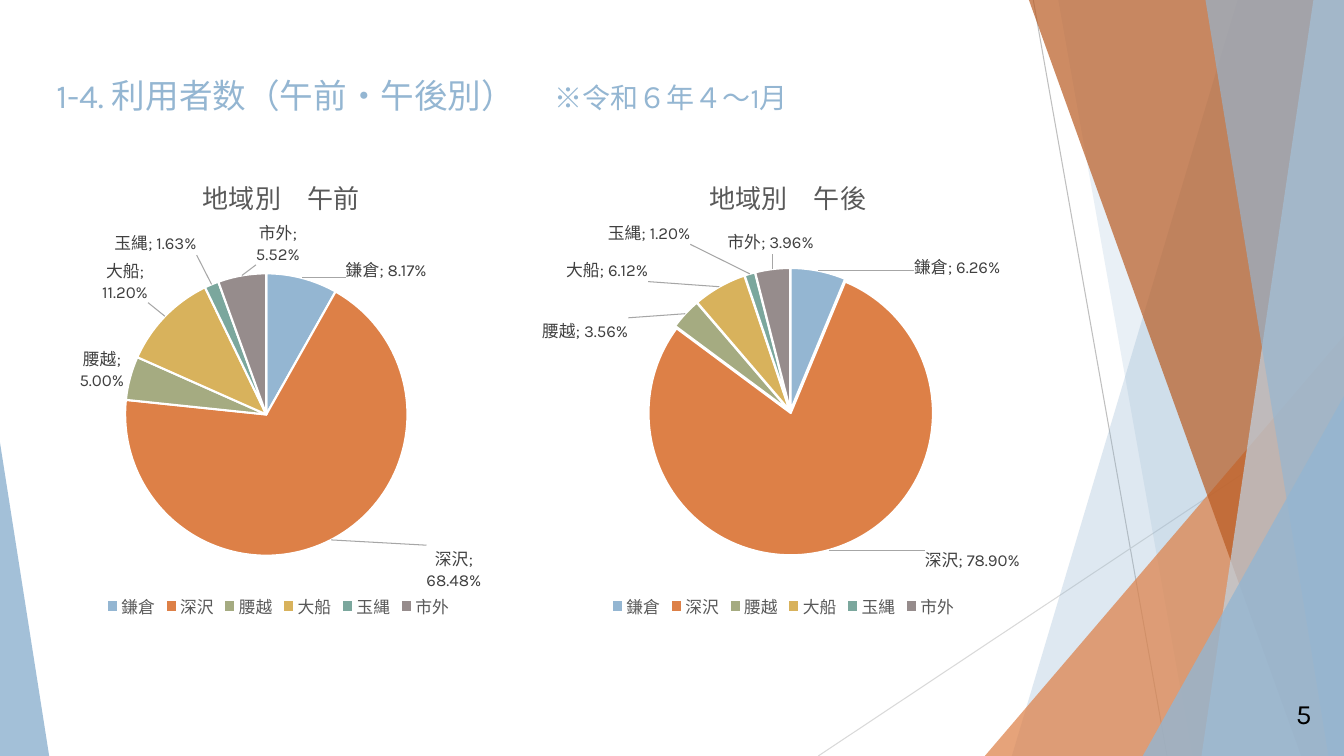
import copy
import pptx
import pptx.util
import pptx.dml.color
import pptx.oxml
import pptx.oxml.ns
import pptx.chart.data
import pptx.enum.chart
import pptx.enum.shapes

Cm, Pt = pptx.util.Cm, pptx.util.Pt
tag = pptx.oxml.ns.qn
W, H = 33.87, 19.05
BLUE, RUST = "94B6D2", "DD8047"
FONT = "Karla"


def tint(color, code):
    color.rgb = pptx.dml.color.RGBColor.from_string(code)


def place(mode="", **spots):
    """Return a manual chart layout; spots are fractions of the chart."""
    lay = pptx.oxml.parse_xml(
        f'<c:layout {pptx.oxml.ns.nsdecls("c")}><c:manualLayout/></c:layout>')
    parts = [("layoutTarget", mode)] if mode else []
    if mode or "edge" in spots:
        parts += [("xMode", "edge"), ("yMode", "edge")]
    spots.pop("edge", None)
    for name, val in parts + list(spots.items()):
        lay[0].makeelement(tag("c:" + name))
        node = lay[0].makeelement(tag("c:" + name), {"val": str(val)})
        lay[0].append(node)
    return lay


deck = pptx.Presentation()
deck.slide_width, deck.slide_height = Cm(W), Cm(H)
slide = deck.slides.add_slide(deck.slide_layouts[6])
shapes = slide.shapes

# Thin lines behind the facets
for x1, y1, x2, y2, code in [(26.04, 0, 29.41, H, "BFBFBF"),
                             (W, 10.24, 20.62, H, "D9D9D9")]:
    line = shapes.add_connector(pptx.enum.shapes.MSO_CONNECTOR.STRAIGHT,
                                Cm(x1), Cm(y1), Cm(x2), Cm(y2))
    tint(line.line.color, code)
    line.line.width = Pt(0.75)
    props = line._element.spPr
    props.append(props.makeelement(tag("a:effectLst")))

# Facets: a band is (top x, bottom x) reaching the right edge,
# a triangle is (left, top, width, height, apex)
facets = [
    ((31.19, 25.5), BLUE, 30),
    ((26.67, 30.05), BLUE, 20),
    ((24.82, 8.46, 9.05, 10.59, 1), RUST, 72),
    ((25.93, 32.79), "B95B22", 70),
    ((33.1, 30.28), "BFD3E4", 70),
    ((30.38, 33.48), BLUE, 65),
    ((28.8, 9.98, 5.07, 9.07, 1), BLUE, 80),
    ((0, 11.15, 1.24, 7.9, 0), BLUE, 85),
]
for geo, code, alpha in facets:
    if len(geo) == 2:
        top, base = geo
        pen = shapes.build_freeform(Cm(top), 0)
        pen.add_line_segments([(Cm(W), 0), (Cm(W), Cm(H)), (Cm(base), Cm(H))])
        facet = pen.convert_to_shape()
    else:
        facet = shapes.add_shape(
            pptx.enum.shapes.MSO_SHAPE.ISOSCELES_TRIANGLE,
            *[Cm(n) for n in geo[:4]])
        facet.adjustments[0] = geo[4]
    facet.shadow.inherit = False
    facet.line.fill.background()
    facet.fill.solid()
    tint(facet.fill.fore_color, code)
    hue = facet._element.spPr.find(".//" + tag("a:srgbClr"))
    hue.append(hue.makeelement(tag("a:alpha"), {"val": str(alpha * 1000)}))

# Title and page number
texts = [
    ((1.17, 1.63, 23.88, 2.03), BLUE,
     [("1-4. 利用者数（午前・午後別）", 24), ("\u3000".strip() or "　", 28),
      ("※令和６年４～1月", 20)]),
    ((32.41, 17.42, 1.45, 1.12), "000000", [("5", 20)]),
]
for box, code, runs in texts:
    frame = shapes.add_textbox(*[Cm(n) for n in box]).text_frame
    frame.word_wrap = True
    for words, size in runs:
        run = frame.paragraphs[0].add_run()
        run.text = words
        run.font.name, run.font.size = FONT, Pt(size)
        tint(run.font.color, code)

# Pie charts; shifts move each label from its outside-end place
areas = ["鎌倉", "深沢", "腰越", "大船", "玉縄", "市外"]
hues = [BLUE, RUST, "A5AB81", "D8B25C", "7BA79D", "968C8C"]
pies = [
    ("地域別　午前", 1.7, 10.62, 0.31, (0.137, 0.254, 0.67, 0.619), 0,
     [0.0817, 0.6848, 0.05, 0.112, 0.0163, 0.0552],
     [(0.1, 0.02), (0.22, 0), (0, 0.03), (-0.03, -0.02), (-0.03, -0.05),
      (0.14, -0.01)]),
    ("地域別　午後", 13.11, 13.26, 0.35, (0.24, 0.256, 0.547, 0.603), 1,
     [0.0626, 0.789, 0.0356, 0.0612, 0.012, 0.0396],
     [(0.18, 0.03), (0.18, -0.02), (-0.1, 0.07), (-0.13, 0), (-0.11, -0.05),
      (0.08, -0.02)]),
]
for name, left, width, start, plot, burst, vals, shifts in pies:
    data = pptx.chart.data.CategoryChartData(number_format="0.00%")
    data.categories = areas
    data.add_series("Series 1", vals)
    chart = shapes.add_chart(pptx.enum.chart.XL_CHART_TYPE.PIE, Cm(left),
                             Cm(3.68), Cm(width), Cm(12.01), data).chart
    chart.font.name, chart.font.size = FONT, Pt(10)
    tint(chart.font.color, "000000")
    chart.plots[0].vary_by_categories = True

    chart.has_title = True
    run = chart.chart_title.text_frame.paragraphs[0].add_run()
    run.text = name
    run.font.name, run.font.size, run.font.bold = FONT, Pt(18.6), False
    tint(run.font.color, "595959")

    chart.has_legend = True
    key = chart.legend
    key.position = pptx.enum.chart.XL_LEGEND_POSITION.BOTTOM
    key.include_in_layout = False
    key.font.name, key.font.size = FONT, Pt(12)
    tint(key.font.color, "595959")

    root = chart._chartSpace
    head = root.find(".//" + tag("c:title"))
    area = root.find(".//" + tag("c:plotArea"))
    for part in (head, area):
        for old in part.findall(tag("c:layout")):
            part.remove(old)
    head.find(tag("c:tx")).addnext(place(edge=True, x=start, y=0.05))
    area.insert(0, place("inner", **dict(zip("xywh", plot))))

    series = chart.plots[0].series[0]
    for i, code in enumerate(hues):
        look = series.points[i].format
        look.fill.solid()
        tint(look.fill.fore_color, code)
        tint(look.line.color, "FFFFFF")
        look.line.width = Pt(1.5)
    if burst:
        first = series._element.find(tag("c:dPt"))
        first.addprevious(first.makeelement(tag("c:explosion"),
                                            {"val": str(burst)}))

    labels = series.data_labels
    labels.show_value = labels.show_category_name = True
    labels.number_format, labels.number_format_is_linked = "0.00%", False
    labels.position = pptx.enum.chart.XL_LABEL_POSITION.OUTSIDE_END
    labels.font.name, labels.font.size = FONT, Pt(12)
    tint(labels.font.color, "404040")
    group = labels._element
    for old in group.findall(tag("c:showLeaderLines")):
        group.remove(old)
    gap = group.makeelement(tag("c:separator"))
    gap.text = "; "
    group.append(gap)
    shared = list(group)
    for i, (dx, dy) in enumerate(shifts):
        label = group.makeelement(tag("c:dLbl"))
        label.append(label.makeelement(tag("c:idx"), {"val": str(i)}))
        label.append(place(x=dx, y=dy))
        label.extend(copy.deepcopy(shared))
        group.insert(i, label)
    group.append(group.makeelement(tag("c:showLeaderLines"), {"val": "1"}))
    group.append(pptx.oxml.parse_xml(
        f'<c:leaderLines {pptx.oxml.ns.nsdecls("c", "a")}><c:spPr>'
        '<a:ln w="9525"><a:solidFill><a:srgbClr val="A6A6A6"/></a:solidFill>'
        '</a:ln></c:spPr></c:leaderLines>'))

deck.save("out.pptx")
